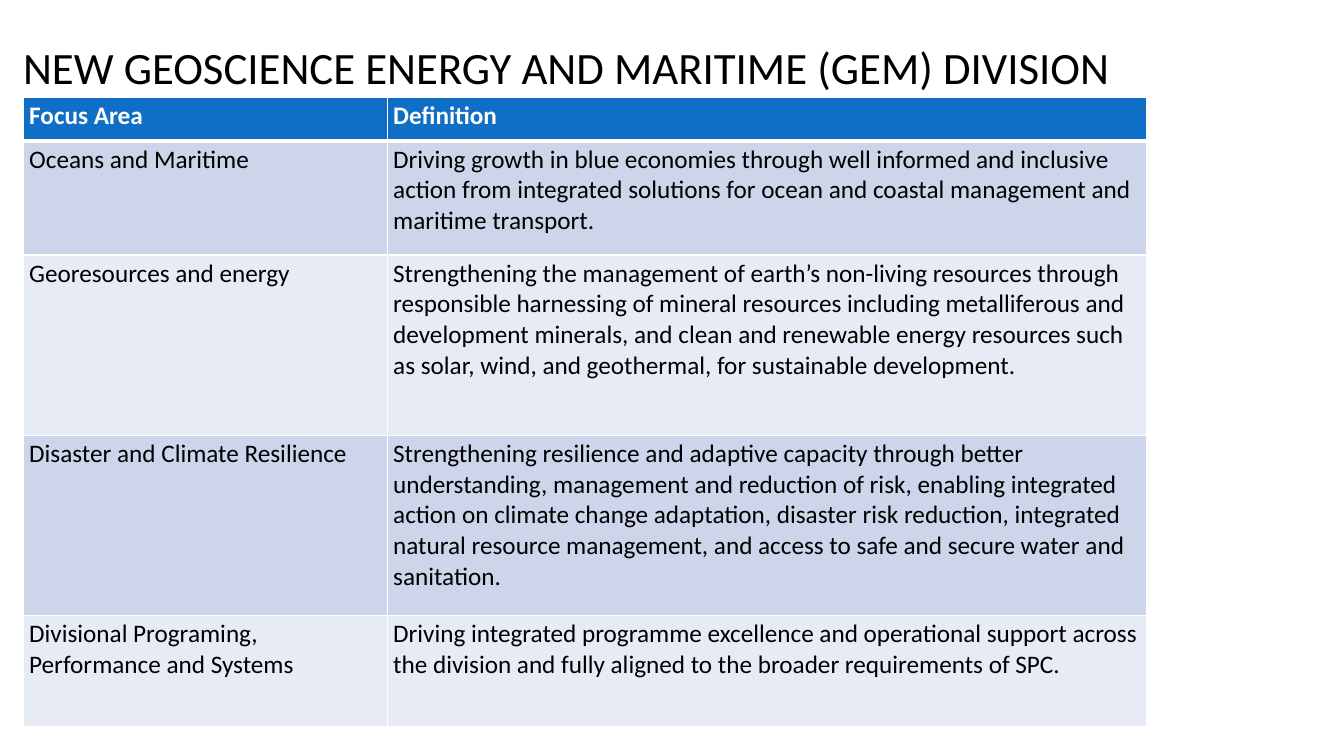
from lxml.etree import SubElement
from pptx import Presentation
from pptx.dml.color import RGBColor
from pptx.enum.text import MSO_ANCHOR as Anchor
from pptx.oxml.ns import qn
from pptx.util import Inches, Pt

WHITE, BLACK, HEADER_BLUE = "FFFFFF", "000000", "0F6FC6"
BANDS = ("CCD5EA", "E7EBF5")
COLUMN_WIDTHS = (3.61, 7.53)
ROW_HEIGHTS = (0.43, 1.13, 1.79, 1.79, 1.1)
TITLE = "NEW GEOSCIENCE ENERGY AND MARITIME (GEM) DIVISION"
FOCUS_AREAS = (
    ("Focus Area", "Definition"),
    ("Oceans and Maritime",
     "Driving growth in blue economies through well informed and inclusive action from "
     "integrated solutions for ocean and coastal management and maritime transport."),
    ("Georesources and energy",
     "Strengthening the management of earth’s non-living resources through responsible "
     "harnessing of mineral resources including metalliferous and development minerals, "
     "and clean and renewable energy resources such as solar, wind, and geothermal, for "
     "sustainable development."),
    ("Disaster and Climate Resilience",
     "Strengthening resilience and adaptive capacity through better understanding, "
     "management and reduction of risk, enabling integrated action on climate change "
     "adaptation, disaster risk reduction, integrated natural resource management, and "
     "access to safe and secure water and sanitation."),
    ("Divisional Programing, Performance and Systems",
     "Driving integrated programme excellence and operational support across the division "
     "and fully aligned to the broader requirements of SPC."),
)


def rgb(value):
    """Turn a hex string into a colour."""
    return RGBColor.from_string(value)


def apply_format(target, settings):
    """Set each attribute named in settings on the target."""
    for attribute, value in settings.items():
        setattr(target, attribute, value)


def write_text(paragraph, text, size, colour, bold=False):
    """Put one formatted run of text in a paragraph."""
    run = paragraph.add_run()
    run.text = text
    apply_format(run.font, {"name": "Calibri", "size": Pt(size), "bold": bold})
    run.font.color.rgb = rgb(colour)


def add_title(slide):
    """Add the heading above the table."""
    heading = slide.shapes.add_textbox(Inches(0.13), Inches(0.4), Inches(11.01), Inches(1.15))
    frame = heading.text_frame
    apply_format(frame, {"word_wrap": True, "vertical_anchor": Anchor.TOP})
    frame.paragraphs[0].line_spacing = 0.9
    write_text(frame.paragraphs[0], TITLE, 32, BLACK)


def add_borders(cell, widths):
    """Draw white cell borders with a width in points for each side."""
    properties = cell._tc.get_or_add_tcPr()
    for side, width in widths.items():
        line = SubElement(properties, qn(f"a:ln{side}"), w=str(Pt(width)))
        SubElement(SubElement(line, qn("a:solidFill")), qn("a:srgbClr"), val=WHITE)


def fill_cell(cell, text, row):
    """Format one cell according to its row and write its text."""
    is_header = row == 0
    apply_format(cell, {"margin_left": Inches(0.06), "margin_right": Inches(0.06),
                        "margin_top": Inches(0.03), "margin_bottom": Inches(0.03),
                        "vertical_anchor": Anchor.TOP})
    add_borders(cell, {"L": 1, "R": 1, "T": 3 if row == 1 else 1, "B": 3 if is_header else 1})
    cell.fill.solid()
    cell.fill.fore_color.rgb = rgb(HEADER_BLUE if is_header else BANDS[(row - 1) % 2])
    write_text(cell.text_frame.paragraphs[0], text, 18, WHITE if is_header else BLACK, is_header)


def add_focus_table(slide):
    """Add the table of focus areas and their definitions."""
    table = slide.shapes.add_table(
        len(ROW_HEIGHTS), len(COLUMN_WIDTHS), Inches(0.23), Inches(0.97),
        Inches(sum(COLUMN_WIDTHS)), Inches(sum(ROW_HEIGHTS))).table
    for column, width in zip(table.columns, COLUMN_WIDTHS):
        column.width = Inches(width)
    for row, (height, texts) in enumerate(zip(ROW_HEIGHTS, FOCUS_AREAS)):
        table.rows[row].height = Inches(height)
        for column, text in enumerate(texts):
            fill_cell(table.cell(row, column), text, row)


def main():
    """Build and save the slide."""
    deck = Presentation()
    apply_format(deck, {"slide_width": Inches(13.33), "slide_height": Inches(7.5)})
    slide = deck.slides.add_slide(deck.slide_layouts[6])
    add_title(slide)
    add_focus_table(slide)
    deck.save("out.pptx")


if __name__ == "__main__":
    main()
